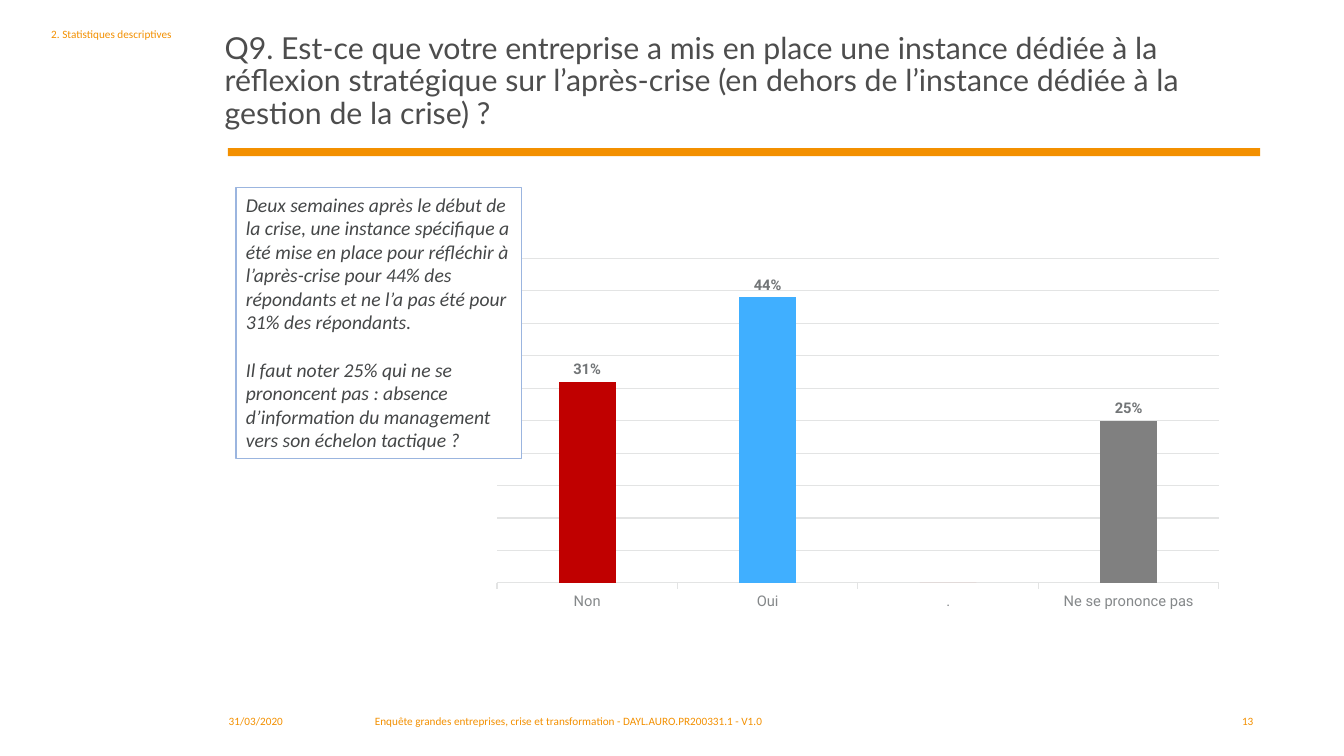
from lxml.etree import SubElement
from pptx import Presentation
from pptx.chart.data import CategoryChartData
from pptx.dml.color import RGBColor
from pptx.enum.chart import XL_CHART_TYPE, XL_LABEL_POSITION, XL_TICK_MARK
from pptx.enum.shapes import MSO_SHAPE
from pptx.enum.text import MSO_ANCHOR, PP_ALIGN
from pptx.oxml.ns import qn
from pptx.util import Pt

PX = 9144
ORANGE, TEXT, GRID, WHITE = "F39000", "454748", "E3E4E4", "FFFFFF"
ANSWERS = [("Non", 0.31, "C00000"), ("Oui", 0.44, "40AFFF"),
           (".", 0, "D99694"), ("Ne se prononce pas", 0.25, "808080")]
TITLE = ("Q9. Est-ce que votre entreprise a mis en place une instance dédiée à la "
         "réflexion stratégique sur l’après-crise (en dehors de l’instance dédiée "
         "à la gestion de la crise) ?")
COMMENTS = ["Deux semaines après le début de la crise, une instance spécifique a été "
            "mise en place pour réfléchir à l’après-crise pour 44% des répondants et "
            "ne l’a pas été pour 31% des répondants.",
            "Il faut noter 25% qui ne se prononcent pas : absence d’information du "
            "management vers son échelon tactique ?"]


def rgb(value):
    """Turn a hex string into a colour."""
    return RGBColor.from_string(value)


def scaled(box):
    """Turn a box in px into EMU."""
    return [length * PX for length in box]


def set_font(font, name, size, color):
    """Set the typeface, size and colour of a font."""
    font.name, font.size = name, Pt(size)
    font.color.rgb = rgb(color)


def add_text(page, box, text, size=8, name="Calibri", color=ORANGE, align=PP_ALIGN.LEFT):
    """Place one wrapped paragraph in a box and return its frame."""
    frame = page.shapes.add_textbox(*scaled(box)).text_frame
    frame.word_wrap = True
    para = frame.paragraphs[0]
    para.text, para.alignment = text, align
    set_font(para.font, name, size, color)
    return frame


def add_rectangle(page, box, fill):
    """Place a plain filled rectangle."""
    shape = page.shapes.add_shape(MSO_SHAPE.RECTANGLE, *scaled(box))
    shape.shadow.inherit = False
    shape.fill.solid()
    shape.fill.fore_color.rgb = rgb(fill)
    shape.line.fill.background()
    return shape


def add_header(page, box):
    """Place the section name, the question and the rule beneath it."""
    left, top, width, height = box
    add_text(page, (left, top, 169, height), "2. Statistiques descriptives")
    frame = add_text(page, (left + 172, top, width - 172, 113), TITLE, 21.6, "Lato", "4D4D4D")
    frame.vertical_anchor = MSO_ANCHOR.BOTTOM
    frame.paragraphs[0].line_spacing = 0.9
    add_rectangle(page, (left + 185, top + 125, width - 185, 8), ORANGE)


def add_footer(page, box):
    """Place the date, the document name and the page number."""
    left, top, width, height = box
    add_text(page, (left, top, 142, height), "31/03/2020")
    add_text(page, (left + 145, top, 547, height),
             "Enquête grandes entreprises, crise et transformation - DAYL.AURO.PR200331.1 - V1.0")
    add_text(page, (left + width - 122, top, 122, height), "13", align=PP_ALIGN.RIGHT)


def add_plot_layout(chart):
    """Fix the inner plot area as fractions of the chart."""
    plot_area = chart.element.find(".//" + qn("c:plotArea"))
    for old in plot_area.findall(qn("c:layout")):
        plot_area.remove(old)
    layout = SubElement(plot_area, qn("c:layout"))
    plot_area.insert(0, layout)
    manual = SubElement(layout, qn("c:manualLayout"))
    settings = [("layoutTarget", "inner"), ("xMode", "edge"), ("yMode", "edge"),
                ("x", "0.02"), ("y", "0.02"), ("w", "0.96"), ("h", "0.89")]
    for tag, value in settings:
        SubElement(manual, qn("c:" + tag)).set("val", value)


def add_answer_chart(page, box):
    """Place the column chart of answers."""
    data = CategoryChartData(number_format="0%")
    data.categories = [name for name, _, _ in ANSWERS]
    data.add_series("Series 1", [share for _, share, _ in ANSWERS])
    chart = page.shapes.add_chart(XL_CHART_TYPE.COLUMN_CLUSTERED, *scaled(box), data).chart
    chart.has_legend = chart.has_title = False
    set_font(chart.font, "Roboto", 10, TEXT)
    add_plot_layout(chart)

    shares = chart.value_axis
    shares.minimum_scale, shares.maximum_scale, shares.major_unit = 0, 0.5, 0.05
    shares.visible = False
    names = chart.category_axis
    names.major_tick_mark = XL_TICK_MARK.OUTSIDE
    set_font(names.tick_labels.font, "Roboto", 10.5, "85888A")
    for line in (shares.major_gridlines.format.line, names.format.line):
        line.color.rgb, line.width = rgb(GRID), Pt(0.75)

    plot = chart.plots[0]
    plot.gap_width, plot.overlap, plot.vary_by_categories = 219, -27, False
    series = plot.series[0]
    series.format.fill.solid()
    series.format.fill.fore_color.rgb = rgb(ORANGE)
    for index, (_, _, color) in enumerate(ANSWERS):
        fill = series.points[index].format.fill
        fill.solid()
        fill.fore_color.rgb = rgb(color)
    labels = series.data_labels
    labels.show_value = True
    labels.position = XL_LABEL_POSITION.OUTSIDE_END
    labels.number_format, labels.number_format_is_linked = "0%;;", False
    set_font(labels.font, "Roboto", 10.5, "727577")
    labels.font.bold = True


def add_comment(page, box):
    """Place the outlined comment on the answers."""
    shape = add_rectangle(page, box, WHITE)
    shape.line.color.rgb, shape.line.width = rgb("9BB5DF"), Pt(1)
    frame = shape.text_frame
    frame.word_wrap = True
    frame.vertical_anchor = MSO_ANCHOR.TOP
    for index, text in enumerate(COMMENTS):
        para = frame.add_paragraph() if index else frame.paragraphs[0]
        para.text, para.alignment = text, PP_ALIGN.LEFT
        if index:
            para.space_before = Pt(17)
        set_font(para.font, "Calibri", 14, TEXT)
        para.font.italic = True


def main():
    """Build the slide and save the deck."""
    deck = Presentation()
    deck.slide_width, deck.slide_height = 1333 * PX, 750 * PX
    page = deck.slides.add_slide(deck.slide_layouts[6])
    add_header(page, (41, 22, 1209, 137))
    add_footer(page, (217, 704, 1036, 36))
    add_answer_chart(page, (478, 249, 746, 362))
    add_comment(page, (234, 186, 283, 269))
    deck.save("out.pptx")


if __name__ == "__main__":
    main()
